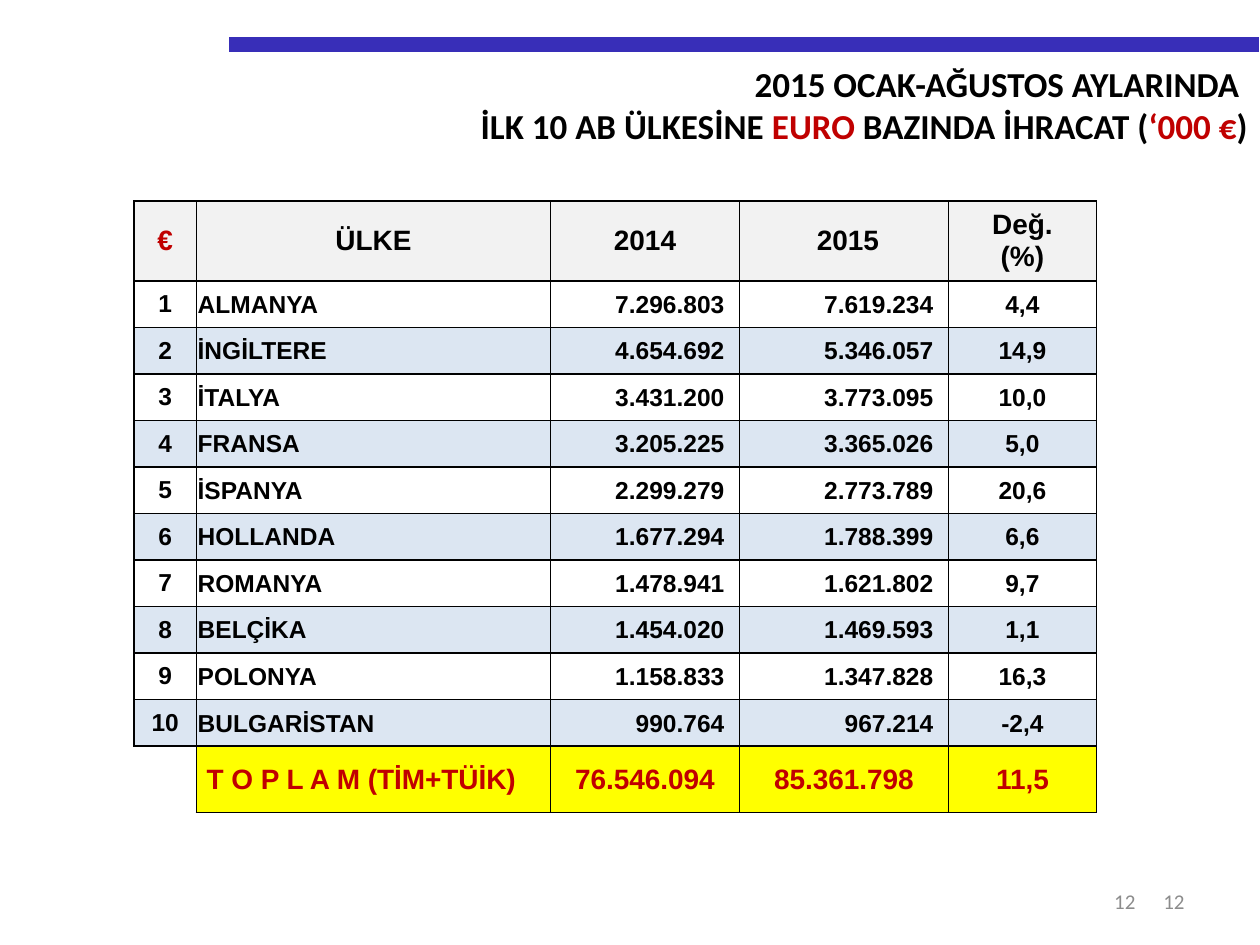
from lxml import etree
from pptx import Presentation
from pptx import util as u
from pptx.dml import color
from pptx.enum import shapes, text
from pptx.oxml import ns

COLOURS = {
    "ink": "000000", "accent": "C00000", "bar": "382EB8", "number": "8C8C8C",
    "header": "F2F2F2", "band": "DCE6F2", "total": "FFFF00",
}
LEFT, CENTER, RIGHT = text.PP_ALIGN.LEFT, text.PP_ALIGN.CENTER, text.PP_ALIGN.RIGHT

COLUMN_WIDTHS = [35.8, 202.3, 108, 119.4, 84.6]
HEADER_HEIGHT, COUNTRY_HEIGHT, TOTAL_HEIGHT = 45.7, 26.6, 38
ROOMY, TIGHT, NUMERIC, INDENTED = (
    (7.2, 3.6, 7.2, 3.6), (0.7, 0.7, 0.7, 0), (0.7, 0.7, 8.6, 0), (5.8, 0.7, 0.7, 0))
HEADERS = ["€", "ÜLKE", "2014", " 2015", "Değ.\n(%)"]
COUNTRIES = [
    ("ALMANYA", "7.296.803", "7.619.234", "4,4"),
    ("İNGİLTERE", "4.654.692", "5.346.057", "14,9"),
    ("İTALYA", "3.431.200", "3.773.095", "10,0"),
    ("FRANSA", "3.205.225", "3.365.026", "5,0"),
    ("İSPANYA", "2.299.279", "2.773.789", "20,6"),
    ("HOLLANDA", "1.677.294", "1.788.399", "6,6"),
    ("ROMANYA", "1.478.941", "1.621.802", "9,7"),
    ("BELÇİKA", "1.454.020", "1.469.593", "1,1"),
    ("POLONYA", "1.158.833", "1.347.828", "16,3"),
    ("BULGARİSTAN", "990.764", "967.214", "-2,4"),
]
TOTALS = ["T O P L A M (TİM+TÜİK)", "76.546.094", "85.361.798", "11,5"]


def rgb(name):
    return color.RGBColor.from_string(COLOURS[name])


class SlideBuilder:
    def __init__(self, slide, body_font="Calibri", table_font="Arial"):
        self.slide = slide
        self.body_font = body_font
        self.table_font = table_font

    def add_lines(self, frame, lines, size, font, align, bold):
        """Fill a text frame from lines, each a list of (text, colour) runs."""
        for index, line in enumerate(lines):
            para = frame.paragraphs[0] if index == 0 else frame.add_paragraph()
            para.alignment = align
            for words, colour in line:
                span = para.add_run()
                span.text = words
                span.font.size = u.Pt(size)
                span.font.name = font
                span.font.bold = bold
                span.font.color.rgb = rgb(colour)

    def text_box(self, left, top, width, height, lines, size, bold=False,
                 anchor=text.MSO_ANCHOR.TOP):
        box = self.slide.shapes.add_textbox(*map(u.Pt, (left, top, width, height)))
        frame = box.text_frame
        frame.word_wrap = True
        frame.vertical_anchor = anchor
        self.add_lines(frame, lines, size, self.body_font, RIGHT, bold)

    def rule(self, x1, x2, y, weight, colour):
        line = self.slide.shapes.add_connector(
            shapes.MSO_CONNECTOR.STRAIGHT, u.Pt(x1), u.Pt(y), u.Pt(x2), u.Pt(y))
        line.line.width = u.Pt(weight)
        line.line.color.rgb = rgb(colour)
        etree.SubElement(line._element.spPr, ns.qn("a:effectLst"))

    def table(self, left, top, widths, heights):
        frame = self.slide.shapes.add_table(
            len(heights), len(widths), u.Pt(left), u.Pt(top),
            u.Pt(sum(widths)), u.Pt(sum(heights)))
        grid = frame.table
        grid.first_row = grid.horz_banding = False
        for column, width in zip(grid.columns, widths):
            column.width = u.Pt(width)
        for row, height in zip(grid.rows, heights):
            row.height = u.Pt(height)
        return grid

    def borders(self, cell, visible="LRTB"):
        properties = cell._tc.get_or_add_tcPr()
        for side in "LRTB":
            edge = etree.SubElement(properties, ns.qn(f"a:ln{side}"), w=str(u.Pt(1)))
            if side in visible:
                fill = etree.SubElement(edge, ns.qn("a:solidFill"))
                etree.SubElement(fill, ns.qn("a:srgbClr"), val=COLOURS["ink"])
            else:
                etree.SubElement(edge, ns.qn("a:noFill"))

    def cell(self, cell, words, size, align, insets, fill=None, colour="ink"):
        self.borders(cell)
        if fill:
            cell.fill.solid()
            cell.fill.fore_color.rgb = rgb(fill)
        else:
            cell.fill.background()
        cell.vertical_anchor = text.MSO_ANCHOR.MIDDLE
        (cell.margin_left, cell.margin_top,
         cell.margin_right, cell.margin_bottom) = map(u.Pt, insets)
        lines = [[(line, colour)] for line in words.split("\n")]
        self.add_lines(cell.text_frame, lines, size, self.table_font, align, True)

    def empty_cell(self, cell, visible):
        self.borders(cell, visible)
        cell.fill.background()


def export_table(builder):
    heights = [HEADER_HEIGHT] + [COUNTRY_HEIGHT] * len(COUNTRIES) + [TOTAL_HEIGHT]
    grid = builder.table(76.5, 114.8, COLUMN_WIDTHS, heights)

    for column, header in enumerate(HEADERS):
        builder.cell(grid.cell(0, column), header, 16, CENTER, ROOMY, "header",
                     "ink" if column else "accent")

    layout = [(CENTER, ROOMY), (LEFT, TIGHT), (RIGHT, NUMERIC), (RIGHT, NUMERIC),
              (CENTER, TIGHT)]
    for rank, country in enumerate(COUNTRIES, 1):
        fill = "band" if rank % 2 == 0 else None
        for column, words in enumerate((str(rank), *country)):
            builder.cell(grid.cell(rank, column), words, 14, *layout[column], fill)

    last = len(heights) - 1
    builder.empty_cell(grid.cell(last, 0), "TR")
    for column, words in enumerate(TOTALS, 1):
        align, insets = (LEFT, INDENTED) if column == 1 else (CENTER, TIGHT)
        builder.cell(grid.cell(last, column), words, 16, align, insets, "total", "accent")


def main():
    deck = Presentation()
    deck.slide_width, deck.slide_height = u.Pt(720), u.Pt(540)
    builder = SlideBuilder(deck.slides.add_slide(deck.slide_layouts[6]))

    builder.rule(131, 719.5, 25.4, 8.5, "bar")
    for left, width in ((516.2, 167.8), (504.7, 151.2)):
        builder.text_box(left, 500.4, width, 28.8, [[("12", "number")]], 12,
                         anchor=text.MSO_ANCHOR.MIDDLE)
    builder.text_box(76.3, 32.4, 643.7, 55.4, [
        [("2015 OCAK-AĞUSTOS AYLARINDA ", "ink")],
        [("İLK 10 AB ÜLKESİNE ", "ink"), ("EURO", "accent"),
         (" BAZINDA İHRACAT (", "ink"), ("‘000 €", "accent"), (")", "ink")],
    ], 20, bold=True)
    export_table(builder)

    deck.save("out.pptx")


if __name__ == "__main__":
    main()
